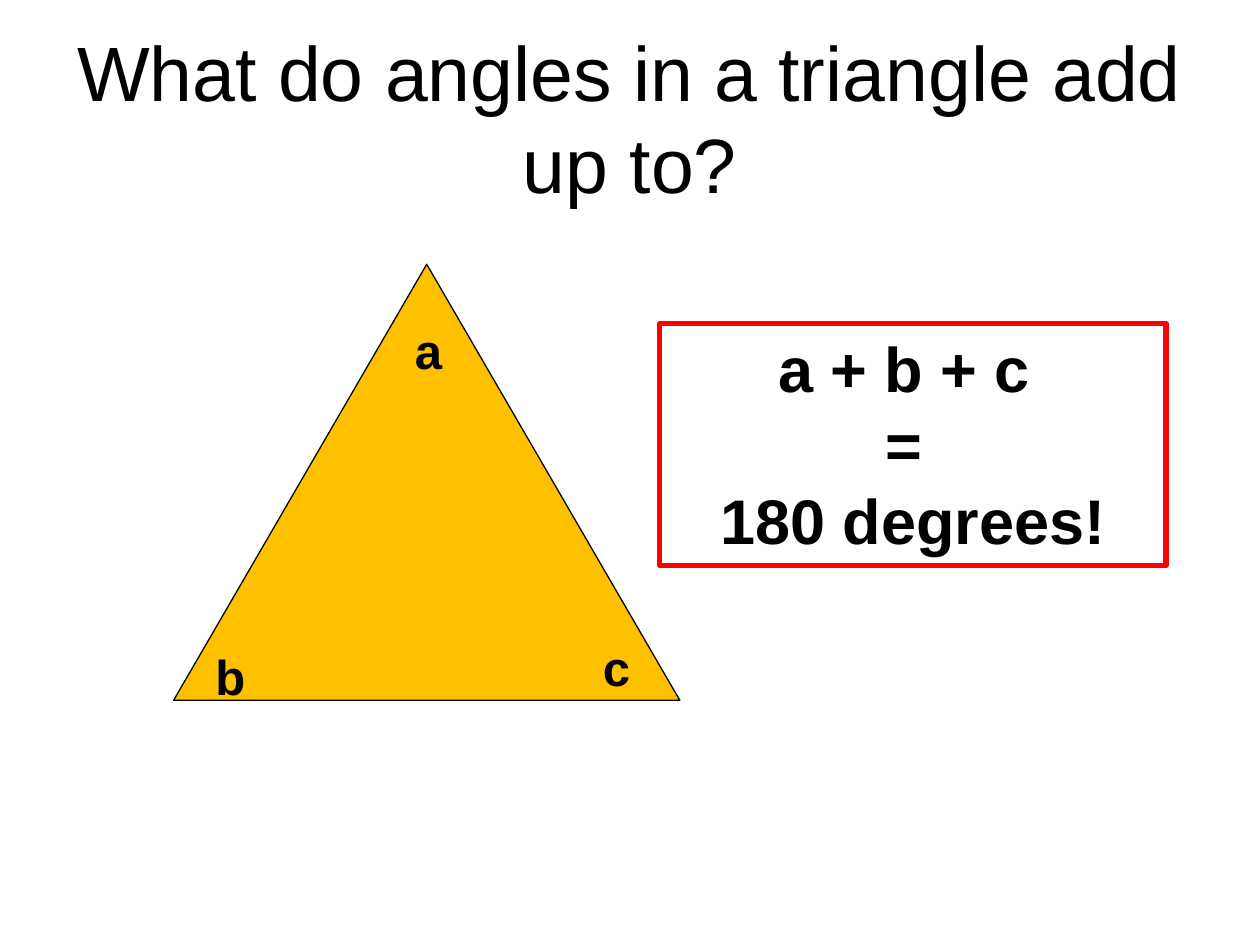
import pptx
import pptx.util
import pptx.dml.color
import pptx.enum.shapes
import pptx.enum.text

Pt = pptx.util.Pt
SHAPE = pptx.enum.shapes.MSO_SHAPE
ANCHOR = pptx.enum.text.MSO_ANCHOR
COLOURS = {"ink": "000000", "gold": "FFC000", "red": "FF0000"}


def colour(name):
    return pptx.dml.color.RGBColor.from_string(COLOURS[name])


def write(frame, text, size=28, bold=True, anchor=ANCHOR.TOP):
    """Fill a text frame with centred text, one paragraph per line."""
    frame.text = text
    frame.word_wrap = True
    frame.auto_size = pptx.enum.text.MSO_AUTO_SIZE.NONE
    frame.vertical_anchor = anchor
    for para in frame.paragraphs:
        para.alignment = pptx.enum.text.PP_ALIGN.CENTER
        for run in para.runs:
            run.font.name = "Arial"
            run.font.size = Pt(size)
            run.font.bold = bold
            run.font.color.rgb = colour("ink")


def place(shape, left, top, width, height):
    shape.left, shape.top = Pt(left), Pt(top)
    shape.width, shape.height = Pt(width), Pt(height)


def draw(slide, kind, box, line, weight, fill=None):
    shape = slide.shapes.add_shape(kind, *map(Pt, box))
    shape.shadow.inherit = False
    if fill:
        shape.fill.solid()
        shape.fill.fore_color.rgb = colour(fill)
    else:
        shape.fill.background()
    shape.line.color.rgb = colour(line)
    shape.line.width = Pt(weight)
    return shape


def label(slide, text, left, top):
    box = slide.shapes.add_textbox(Pt(left), Pt(top), Pt(28), Pt(41))
    write(box.text_frame, text)


def main():
    deck = pptx.Presentation()
    deck.slide_width, deck.slide_height = Pt(720), Pt(540)
    slide = deck.slides.add_slide(deck.slide_layouts[5])

    # Question
    title = slide.shapes.title
    place(title, 36, 21.6, 648, 90)
    write(title.text_frame, "What do angles in a triangle add up to?",
          size=44, bold=False, anchor=ANCHOR.MIDDLE)

    # Triangle and its angles
    draw(slide, SHAPE.ISOSCELES_TRIANGLE, (99.2, 151, 289.3, 249.2),
         "ink", 0.75, fill="gold")
    for text, left, top in (("a", 230, 179.5), ("b", 116, 366),
                            ("c", 337.5, 361)):
        label(slide, text, left, top)

    # Answer
    answer = draw(slide, SHAPE.RECTANGLE, (377, 185, 289.3, 138.3), "red", 3)
    write(answer.text_frame, "a + b + c \n= \n180 degrees!", size=36)

    deck.save("out.pptx")


if __name__ == "__main__":
    main()
